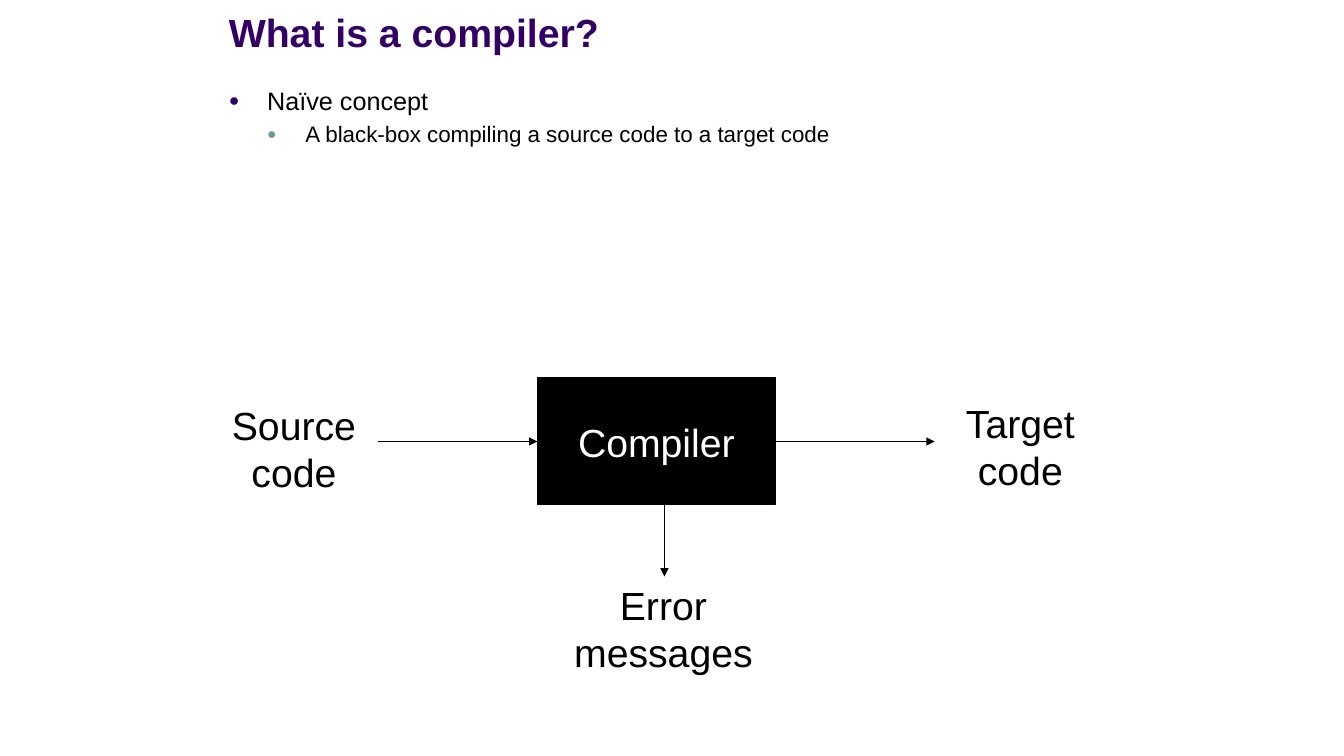
from dataclasses import dataclass

from lxml import etree
from pptx import Presentation
from pptx.dml.color import RGBColor
from pptx.enum.shapes import MSO_CONNECTOR, MSO_SHAPE
from pptx.enum.text import MSO_ANCHOR, MSO_AUTO_SIZE, PP_ALIGN
from pptx.oxml.ns import qn
from pptx.util import Emu, Pt

LEFT, CENTER = PP_ALIGN.LEFT, PP_ALIGN.CENTER
TOP, MIDDLE, BOTTOM = MSO_ANCHOR.TOP, MSO_ANCHOR.MIDDLE, MSO_ANCHOR.BOTTOM
NO_FIT, GROW = MSO_AUTO_SIZE.NONE, MSO_AUTO_SIZE.SHAPE_TO_FIT_TEXT
RECT, STRAIGHT = MSO_SHAPE.RECTANGLE, MSO_CONNECTOR.STRAIGHT
SIDE_LEFT, SIDE_RIGHT = 1, 3
PX = 9144  # 100 px to the inch


@dataclass(frozen=True)
class Theme:
    font: str = "Arial"
    ink: str = "000000"
    paper: str = "FFFFFF"
    title: str = "330066"
    bullets: tuple = ("330066", "669999")
    big: int = 28
    list_sizes: tuple = (18, 16)
    line: float = 0.75


def px(*values):
    return [Emu(v * PX) for v in values]


def rgb(code):
    return RGBColor.from_string(code)


def write(p, text, *, font, size, color, bold=False, align=LEFT):
    p.text = text
    p.alignment = align
    for r in p.runs:
        r.font.name = font
        r.font.size = Pt(size)
        r.font.bold = bold
        r.font.color.rgb = rgb(color)


class Deck:
    def __init__(self, theme, width, height):
        self.theme = theme
        self.prs = Presentation()
        self.prs.slide_width, self.prs.slide_height = px(width, height)
        self.s = self.prs.slides.add_slide(self.prs.slide_layouts[1])
        self.s.background.fill.solid()
        self.s.background.fill.fore_color.rgb = rgb(theme.paper)

    def frame(self, sp, anchor, wrap, fit):
        tf = sp.text_frame
        tf.vertical_anchor, tf.word_wrap, tf.auto_size = anchor, wrap, fit
        return tf

    def place(self, sp, box):
        sp.left, sp.top, sp.width, sp.height = px(*box)

    def title(self, text, box):
        sp = self.s.shapes.title
        self.place(sp, box)
        tf = self.frame(sp, BOTTOM, True, NO_FIT)
        t = self.theme
        write(tf.paragraphs[0], text, font=t.font, size=t.big, color=t.title, bold=True)

    def bullets(self, items, box, step):
        sp = self.s.placeholders[1]
        self.place(sp, box)
        tf = self.frame(sp, TOP, True, NO_FIT)
        t = self.theme
        for i, (level, text) in enumerate(items):
            p = tf.add_paragraph() if i else tf.paragraphs[0]
            write(p, text, font=t.font, size=t.list_sizes[level], color=t.ink)
            p.level = level
            pPr = p._p.get_or_add_pPr()
            pPr.set("marL", str(step * (level + 1) * PX))
            pPr.set("indent", str(-step * PX))
            clr = etree.SubElement(pPr, qn("a:buClr"))
            etree.SubElement(clr, qn("a:srgbClr"), val=t.bullets[level])
            etree.SubElement(pPr, qn("a:buSzPct"), val="70000")
            etree.SubElement(pPr, qn("a:buFont"), typeface=t.font)
            etree.SubElement(pPr, qn("a:buChar"), char="●")

    def box(self, text, box):
        t = self.theme
        sp = self.s.shapes.add_shape(RECT, *px(*box))
        sp.shadow.inherit = False
        sp.fill.solid()
        sp.fill.fore_color.rgb = rgb(t.ink)
        sp.line.color.rgb = rgb(t.ink)
        sp.line.width = Pt(t.line)
        tf = self.frame(sp, MIDDLE, False, NO_FIT)
        write(tf.paragraphs[0], text, font=t.font, size=t.big, color=t.paper, align=CENTER)
        return sp

    def label(self, text, box):
        t = self.theme
        sp = self.s.shapes.add_textbox(*px(*box))
        tf = self.frame(sp, TOP, False, GROW)
        write(tf.paragraphs[0], text, font=t.font, size=t.big, color=t.ink, align=CENTER)

    def arrow(self, start, end, begin=None, finish=None):
        c = self.s.shapes.add_connector(STRAIGHT, *px(*start, *end))
        if begin:
            c.begin_connect(*begin)
        if finish:
            c.end_connect(*finish)
        c.line.color.rgb = rgb(self.theme.ink)
        c.line.width = Pt(self.theme.line)
        etree.SubElement(c.line._get_or_add_ln(), qn("a:tailEnd"), type="triangle")
        etree.SubElement(c._element.spPr, qn("a:effectLst"))


def main():
    deck = Deck(Theme(), 1333, 750)

    # Heading and list
    deck.title("What is a compiler?", (217, 13, 900, 47))
    deck.bullets([(0, "Naïve concept"),
                  (1, "A black-box compiling a source code to a target code")],
                 (217, 80, 900, 626), step=38)

    # Black box
    left, top, width, height = 533, 375, 236, 126
    right, bottom, middle = left + width, top + height, top + height // 2
    compiler = deck.box("Compiler", (left, top, width, height))

    # Flow arrows
    reach = 158
    deck.arrow((right, middle), (right + reach, middle), begin=(compiler, SIDE_RIGHT))
    deck.arrow((left - reach, middle), (left, middle), finish=(compiler, SIDE_LEFT))
    deck.arrow((659, bottom), (659, 572))

    # Input and outputs
    for text, x, y, w in (("Source\ncode", 219, 393, 145),
                          ("Target\ncode", 947, 391, 130),
                          ("Error\nmessages", 558, 572, 200)):
        deck.label(text, (x, y, w, 104))

    deck.prs.save("out.pptx")


if __name__ == "__main__":
    main()
